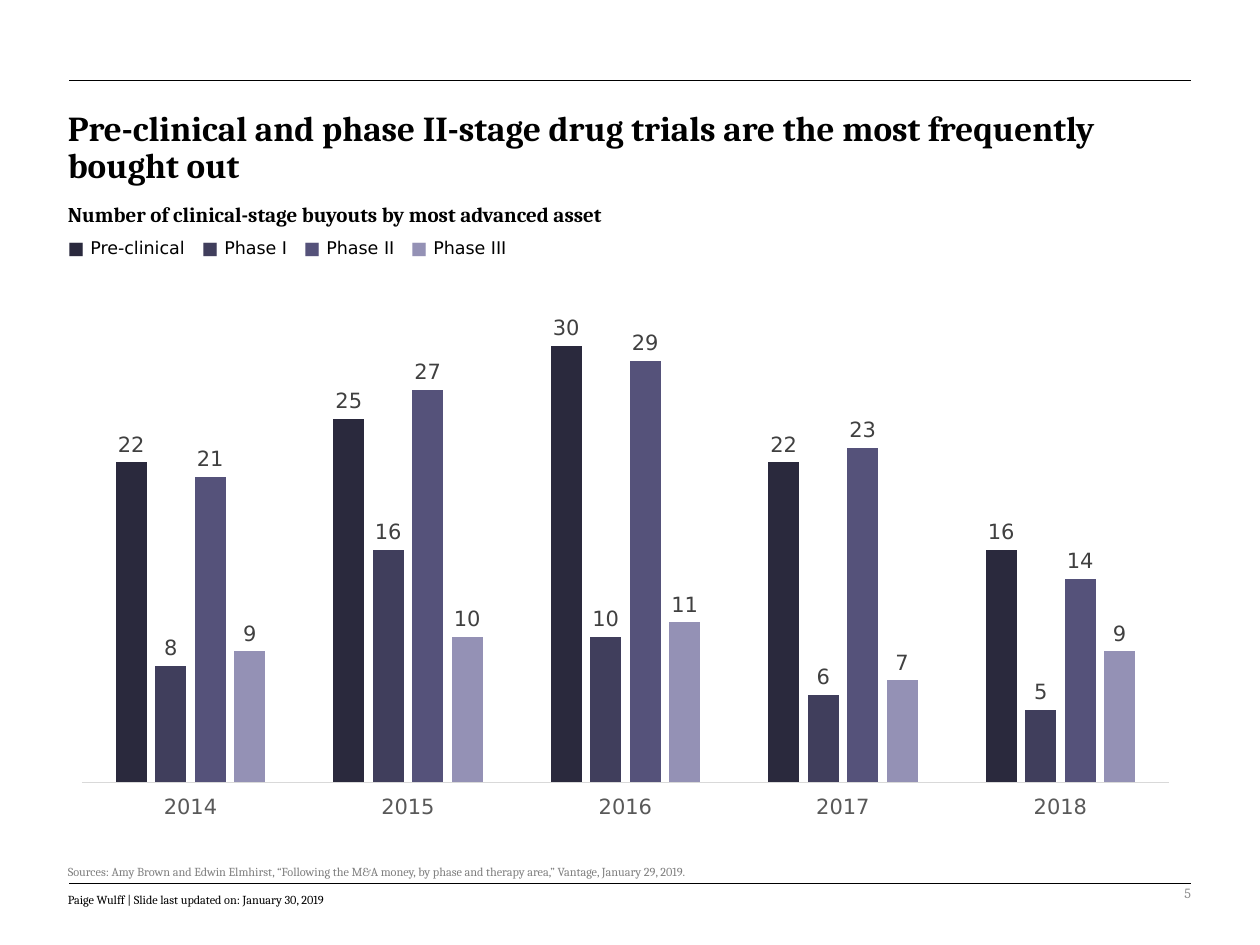
from lxml.etree import SubElement
from pptx import Presentation
from pptx.chart.data import CategoryChartData
from pptx.dml.color import RGBColor
from pptx.enum.chart import XL_CHART_TYPE as ChartType, XL_LABEL_POSITION as LabelPosition
from pptx.enum.chart import XL_TICK_LABEL_POSITION as TickLabels, XL_TICK_MARK as TickMark
from pptx.enum.shapes import MSO_CONNECTOR as Connector
from pptx.enum.text import MSO_ANCHOR as Anchor, PP_ALIGN as Align
from pptx.oxml import parse_xml
from pptx.oxml.ns import nsdecls, qn
from pptx.util import Pt

BLACK = RGBColor(0x00, 0x00, 0x00)
SOURCE_GREY = RGBColor(0x80, 0x80, 0x80)
PAGE_GREY = RGBColor(0x8C, 0x8C, 0x8C)
LABEL_GREY = RGBColor(0x40, 0x40, 0x40)
YEAR_GREY = RGBColor(0x59, 0x59, 0x59)
AXIS_GREY = RGBColor(0xD9, 0xD9, 0xD9)
SERIF = "Cambria"
SANS = "DejaVu Sans"

YEARS = ["2014", "2015", "2016", "2017", "2018"]
PHASES = [
    ("Pre-clinical", RGBColor(0x2A, 0x29, 0x3D), [22, 25, 30, 22, 16]),
    ("Phase I", RGBColor(0x40, 0x3E, 0x5C), [8, 16, 10, 6, 5]),
    ("Phase II", RGBColor(0x55, 0x52, 0x7A), [21, 27, 29, 23, 14]),
    ("Phase III", RGBColor(0x94, 0x91, 0xB5), [9, 10, 11, 7, 9]),
]
LEGEND_TABS = [76.6, 134.9, 196]


def style(font, size, color, name=SERIF, bold=False):
    font.size = Pt(size)
    font.color.rgb = color
    font.name = name
    font.bold = bold


def add_text(slide, box, text, size, color, bold=False, spacing=None,
             align=Align.LEFT, anchor=Anchor.TOP):
    frame = slide.shapes.add_textbox(*map(Pt, box)).text_frame
    frame.word_wrap = True
    frame.vertical_anchor = anchor
    paragraph = frame.paragraphs[0]
    paragraph.text = text
    paragraph.alignment = align
    paragraph.line_spacing = spacing
    style(paragraph.runs[0].font, size, color, bold=bold)


def add_rule(slide, left, top, width):
    rule = slide.shapes.add_connector(
        Connector.STRAIGHT, Pt(left), Pt(top), Pt(left + width), Pt(top))
    rule.line.color.rgb = BLACK
    rule.line.width = Pt(0.5)
    SubElement(rule.element.spPr, qn("a:effectLst"))


def add_heading(slide, left, top, width):
    add_rule(slide, left + 7.9, top, 640.8)
    add_text(slide, (left, top + 13.7, width, 50.4),
             "Pre-clinical and phase II-stage drug trials are the most frequently bought out",
             20, BLACK, bold=True, spacing=0.9)
    add_text(slide, (left, top + 65.5, 522.7, 21.6),
             "Number of clinical-stage buyouts by most advanced asset",
             12, BLACK, bold=True)


def add_legend(slide, box):
    frame = slide.shapes.add_textbox(*map(Pt, box)).text_frame
    frame.word_wrap = False
    paragraph = frame.paragraphs[0]
    paragraph.text = "\t".join(f"■ {phase}" for phase, _, _ in PHASES)
    tabs = SubElement(paragraph._p.get_or_add_pPr(), qn("a:tabLst"))
    for position in LEGEND_TABS:
        SubElement(tabs, qn("a:tab"), pos=str(Pt(position)), algn="l")
    paragraph.text = ""
    for index, (phase, color, _) in enumerate(PHASES):
        marker, label = paragraph.add_run(), paragraph.add_run()
        marker.text = "■ "
        label.text = phase + ("\t" if index < len(LEGEND_TABS) else "")
        style(marker.font, 10, color, SANS, bold=True)
        style(label.font, 10, BLACK, SANS)


def set_plot_area(chart, x, y, w, h):
    plot_area = chart.element.xpath(".//c:plotArea")[0]
    for layout in plot_area.xpath("c:layout"):
        plot_area.remove(layout)
    plot_area.insert(0, parse_xml(
        f'<c:layout {nsdecls("c")}><c:manualLayout><c:layoutTarget val="inner"/>'
        '<c:xMode val="edge"/><c:yMode val="edge"/>'
        f'<c:x val="{x}"/><c:y val="{y}"/><c:w val="{w}"/><c:h val="{h}"/>'
        '</c:manualLayout></c:layout>'))


def add_buyouts_chart(slide, box):
    buyouts = CategoryChartData()
    buyouts.categories = YEARS
    for phase, _, counts in PHASES:
        buyouts.add_series(phase, counts)
    chart = slide.shapes.add_chart(
        ChartType.COLUMN_CLUSTERED, *map(Pt, box), buyouts).chart
    chart.has_legend = False
    chart.has_title = False
    style(chart.font, 10, BLACK)
    set_plot_area(chart, 0.02, 0.02, 0.96, 0.91)

    year_axis = chart.category_axis
    year_axis.major_tick_mark = TickMark.NONE
    year_axis.tick_label_position = TickLabels.LOW
    style(year_axis.tick_labels.font, 12, YEAR_GREY, SANS)
    year_axis.format.line.color.rgb = AXIS_GREY
    year_axis.format.line.width = Pt(0.75)
    count_axis = chart.value_axis
    count_axis.visible = False
    count_axis.has_major_gridlines = False
    count_axis.minimum_scale = 0
    count_axis.maximum_scale = 35

    plot = chart.plots[0]
    plot.gap_width = 219
    plot.overlap = -27
    plot.vary_by_categories = False
    for series, (_, color, _) in zip(plot.series, PHASES):
        series.format.fill.solid()
        series.format.fill.fore_color.rgb = color
        labels = series.data_labels
        labels.show_value = True
        labels.position = LabelPosition.OUTSIDE_END
        style(labels.font, 12, LABEL_GREY, SANS)


def add_footer(slide, left, top, width):
    add_text(slide, (left, top, width, 15.1),
             "Sources: Amy Brown and Edwin Elmhirst, “Following the M&A money, "
             "by phase and therapy area,” Vantage, January 29, 2019.",
             7, SOURCE_GREY, spacing=1.1)
    add_rule(slide, left + 7.9, top + 15.1, 640.8)
    add_text(slide, (left, top + 15.8, 239.8, 26.6),
             "Paige Wulff | Slide last updated on: January 30, 2019",
             7, BLACK, spacing=1.1)
    add_text(slide, (left + 476.6, top + 6.5, 179.3, 28.8), "5",
             8, PAGE_GREY, align=Align.RIGHT, anchor=Anchor.MIDDLE)


def main():
    deck = Presentation()
    deck.slide_width, deck.slide_height = Pt(720), Pt(540)
    slide = deck.slides.add_slide(deck.slide_layouts[6])
    add_heading(slide, 31.7, 46.1, 662.4)
    add_legend(slide, (31.7, 131.8, 541.4, 22.3))
    add_buyouts_chart(slide, (33.8, 149.8, 647.3, 319.7))
    add_footer(slide, 31.7, 489.6, 649.4)
    deck.save("out.pptx")


if __name__ == "__main__":
    main()
